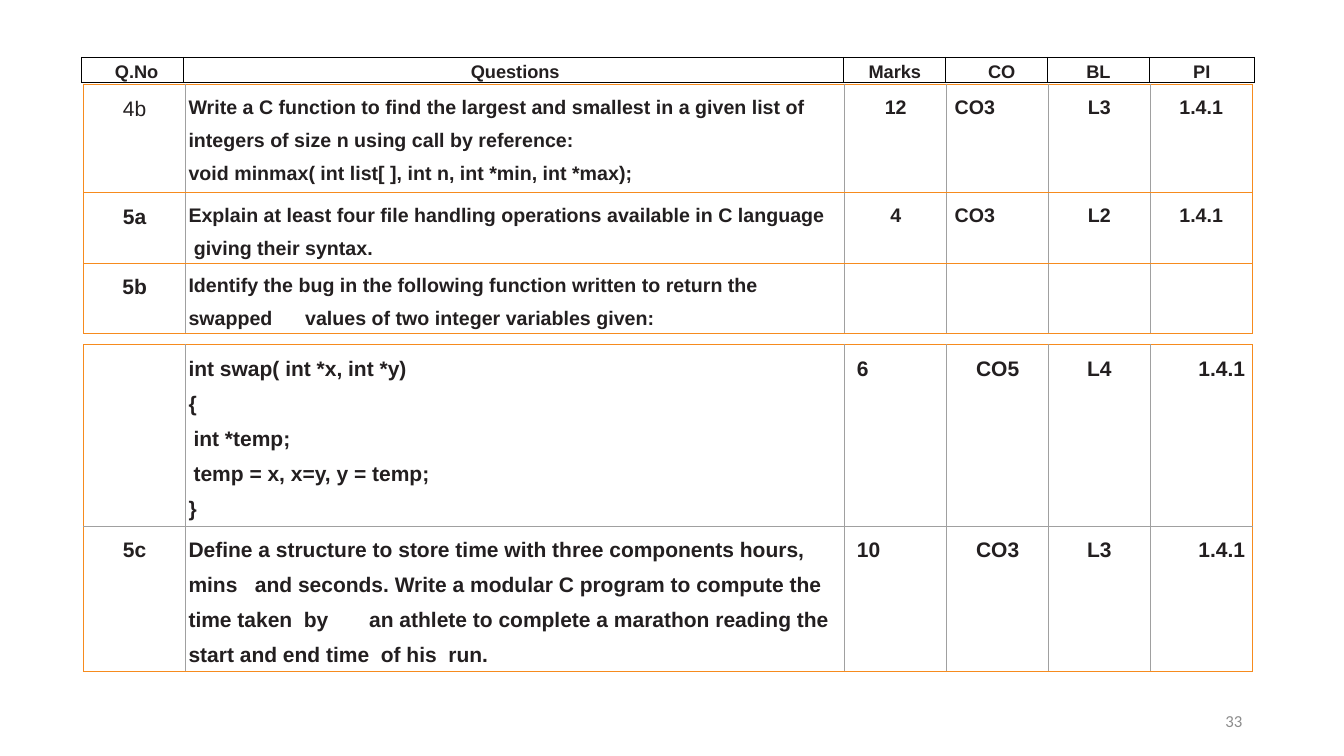
from dataclasses import dataclass

import pptx
import pptx.dml.color
import pptx.enum.text
import pptx.oxml
import pptx.oxml.ns
import pptx.util

Inches, Pt = pptx.util.Inches, pptx.util.Pt
ALIGN, ANCHOR = pptx.enum.text.PP_ALIGN, pptx.enum.text.MSO_ANCHOR
INK, ORANGE, GREY, BLACK = "231F20", "F68B1E", "A0A0A0", "000000"


@dataclass
class Para:
    """One paragraph and its left indent in inches."""
    text: str
    indent: float = 0


@dataclass
class Cell:
    """The paragraphs of a table cell and their look."""
    paras: list[Para]
    align: ALIGN = ALIGN.LEFT
    size: float = 15
    bold: bool = True
    right: float = 0


@dataclass
class Grid:
    """A table with its place, cells and border colours."""
    left: float
    top: float
    cols: list[float]
    heights: list[float]
    rows: list[list[Cell]]
    outer: str
    row_line: str
    col_line: str
    line_width: float = 0.75
    spacing: float = 1.5
    inset: float = 0.01
    anchor: ANCHOR = ANCHOR.TOP


def rgb(value: str) -> pptx.dml.color.RGBColor:
    """Turn a hex string into a colour."""
    return pptx.dml.color.RGBColor.from_string(value)


def add_run(p, text: str, size: float, color: str, font: str, bold: bool = False) -> None:
    """Add a formatted run to a paragraph."""
    r = p.add_run()
    r.text = text
    r.font.size, r.font.name, r.font.bold = Pt(size), font, bold
    r.font.color.rgb = rgb(color)


def add_border(cell, side: str, color: str, width: float) -> None:
    """Draw one side of a cell."""
    tcPr = cell._tc.get_or_add_tcPr()
    tcPr.append(pptx.oxml.parse_xml(
        f'<a:ln{side} {pptx.oxml.ns.nsdecls("a")} w="{Pt(width)}">'
        f'<a:solidFill><a:srgbClr val="{color}"/></a:solidFill></a:ln{side}>'))


def fill_cell(cell, data: Cell, grid: Grid) -> None:
    """Write the paragraphs of a cell."""
    cell.margin_left = cell.margin_bottom = 0
    cell.margin_right, cell.margin_top = Inches(data.right), Inches(grid.inset)
    cell.vertical_anchor = grid.anchor
    tf = cell.text_frame
    for i, para in enumerate(data.paras):
        p = tf.add_paragraph() if i else tf.paragraphs[0]
        p.alignment, p.line_spacing = data.align, grid.spacing
        p._p.get_or_add_pPr().set("marL", str(Inches(para.indent)))
        add_run(p, para.text, data.size, INK, "Arial", data.bold)


def add_grid(s, grid: Grid) -> None:
    """Add a table to the slide."""
    n_rows, n_cols = len(grid.rows), len(grid.cols)
    table = s.shapes.add_table(
        n_rows, n_cols, Inches(grid.left), Inches(grid.top),
        Inches(sum(grid.cols)), Inches(sum(grid.heights))).table
    table.first_row = table.horz_banding = False
    for col, width in zip(table.columns, grid.cols):
        col.width = Inches(width)
    for i, row in enumerate(grid.rows):
        table.rows[i].height = Inches(grid.heights[i])
        for j, data in enumerate(row):
            cell = table.cell(i, j)
            fill_cell(cell, data, grid)
            sides = {"L": (j == 0, grid.col_line), "R": (j == n_cols - 1, grid.col_line),
                     "T": (i == 0, grid.row_line), "B": (i == n_rows - 1, grid.row_line)}
            for side, (edge, inner) in sides.items():
                add_border(cell, side, grid.outer if edge else inner, grid.line_width)
            cell.fill.background()


def mid(text: str, size: float = 14, bold: bool = True, indent: float = 0) -> Cell:
    """Make a centred cell."""
    return Cell([Para(text, indent)], ALIGN.CENTER, size, bold)


def question(size: float, *lines: str) -> Cell:
    """Make a question cell."""
    return Cell([Para(line, 0.03) for line in lines], size=size, right=0.04)


def upper_marks(marks: str, co: str, level: str, pi: str) -> list[Cell]:
    """Make the four mark cells of the upper table."""
    return [mid(marks), Cell([Para(co, 0.08)], size=14), mid(level), mid(pi)]


def lower_marks(marks: str, co: str, level: str, pi: str) -> list[Cell]:
    """Make the four mark cells of the lower table."""
    return [Cell([Para(marks, 0.12)]), mid(co, 15), mid(level, 15),
            Cell([Para(pi)], ALIGN.RIGHT, right=0.07)]


def main() -> None:
    """Build the slide and save it."""
    prs = pptx.Presentation()
    prs.slide_width, prs.slide_height = Inches(13.33), Inches(7.5)
    s = prs.slides.add_slide(prs.slide_layouts[6])
    cols = [1.01, 6.54] + [1.01] * 4
    empty = Cell([])
    swap = Cell([Para("int swap( int *x, int *y)", 0.03), Para("{", 0.03),
                 Para("int *temp;", 0.08), Para("temp = x, x=y, y = temp;", 0.08),
                 Para("}", 0.03)])

    add_grid(s, Grid(0.83, 3.42, cols, [1.8, 1.44], [
        [empty, swap, *lower_marks("6", "CO5", "L4", "1.4.1")],
        [mid("5c", 15),
         question(15, "Define a structure to store time with three components hours, "
                      "mins   and seconds. Write a modular C program to compute the "
                      "time taken  by       an athlete to complete a marathon reading the "
                      "start and end time  of his  run."),
         *lower_marks("10", "CO3", "L3", "1.4.1")],
    ], ORANGE, GREY, GREY))

    add_grid(s, Grid(0.83, 0.84, cols, [1.07, 0.7, 0.7], [
        [mid("4b", 15, False),
         question(14, "Write a C function to find the largest and smallest in a given list of",
                  "integers of size n using call by reference:",
                  "void minmax( int list[ ], int n, int *min, int *max);"),
         *upper_marks("12", "CO3", "L3", "1.4.1")],
        [mid("5a", 15),
         question(14, "Explain at least four file handling operations available in C language",
                  " giving their syntax."),
         *upper_marks("4", "CO3", "L2", "1.4.1")],
        [mid("5b", 15),
         question(14, "Identify the bug in the following function written to return the "
                      "swapped      values of two integer variables given:"),
         *[empty] * 4],
    ], ORANGE, ORANGE, GREY))

    headings = {"Q.No": 0.08, "Questions": 0.03, "Marks": 0, "CO": 0.1, "BL": 0, "PI": 0}
    add_grid(s, Grid(0.81, 0.57, [1.01, 6.55, 1.01, 1.01, 1.01, 1.04], [0.25],
                     [[mid(text, 13, indent=indent) for text, indent in headings.items()]],
                     BLACK, BLACK, BLACK, 1, 1.15, 0.02, ANCHOR.MIDDLE))

    sp = s.shapes.add_textbox(Inches(9.42), Inches(6.95), Inches(3), Inches(0.4))
    tf = sp.text_frame
    tf.word_wrap, tf.vertical_anchor = True, ANCHOR.MIDDLE
    p = tf.paragraphs[0]
    p.alignment = ALIGN.RIGHT
    add_run(p, "33", 12, "8C8C8C", "Calibri")
    prs.save("out.pptx")


if __name__ == "__main__":
    main()
